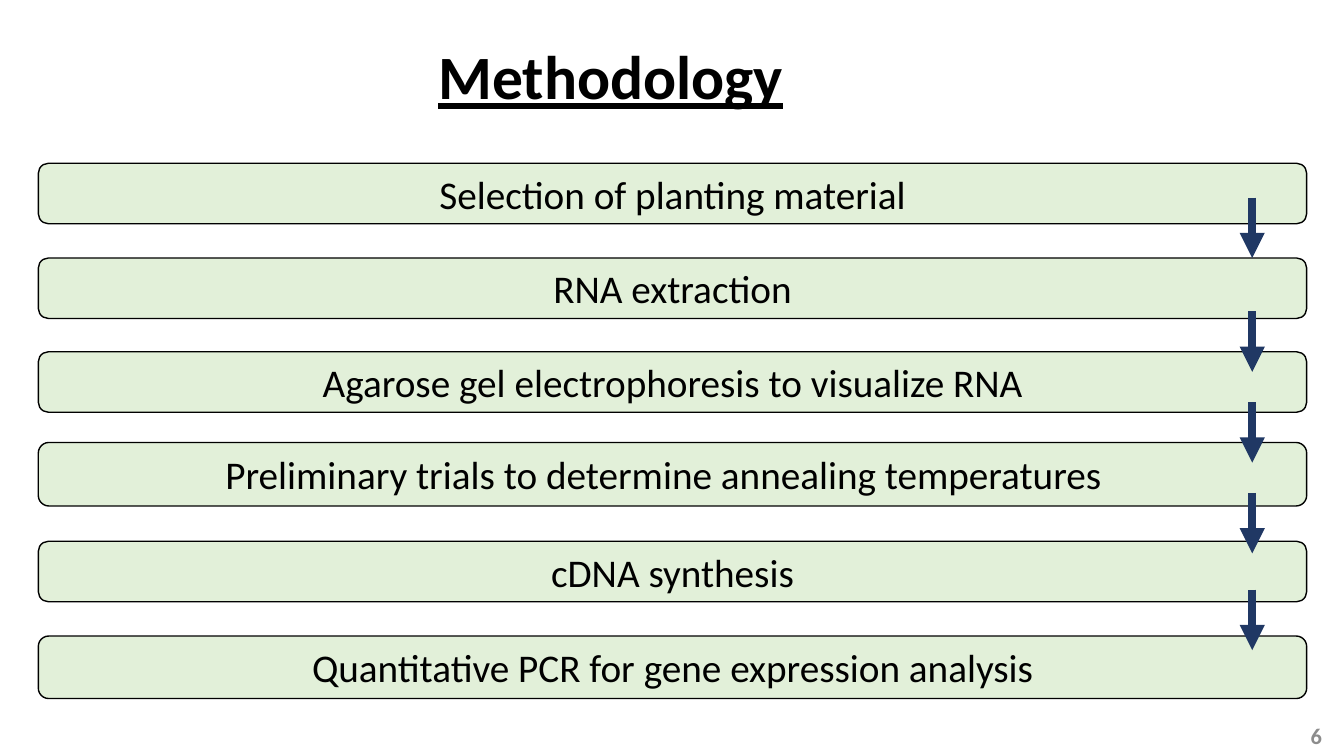
from lxml.etree import SubElement
from pptx import Presentation
from pptx.dml.color import RGBColor
from pptx.enum.shapes import MSO_CONNECTOR, MSO_SHAPE
from pptx.enum.text import MSO_ANCHOR, PP_ALIGN
from pptx.oxml.ns import qn
from pptx.util import Inches, Pt

COLORS = {"text": "000000", "number": "8C8C8C", "bar": "E2F0D9", "arrow": "203864"}
FORMATS = {
    "title": {"size": Pt(44), "bold": True, "underline": True},
    "step": {"size": Pt(28)},
    "number": {"size": Pt(16), "bold": True},
}
INSET = 0.1

# Step wording, top and height of its bar, extra inset on the right
STEPS = [
    ("Selection of planting material", 1.62, 0.6, 0),
    ("RNA extraction", 2.56, 0.6, 0),
    ("Agarose gel electrophoresis to visualize RNA", 3.49, 0.6, 0),
    ("Preliminary trials to determine annealing temperatures", 4.39, 0.63, 0.18),
    ("cDNA synthesis", 5.37, 0.6, 0),
    ("Quantitative PCR for gene expression analysis", 6.31, 0.62, 0),
]
ARROW_TOPS = [1.96, 3.09, 3.99, 4.89, 5.85]
ARROW_LENGTH = 0.6
ARROW_INDENT = 0.54  # from the right edge of the bars


def rgb(name):
    return RGBColor.from_string(COLORS[name])


def write(shape, text, style, color="text", align=PP_ALIGN.CENTER,
          anchor=MSO_ANCHOR.MIDDLE, extra_inset=0):
    frame = shape.text_frame
    frame.word_wrap = True
    frame.vertical_anchor = anchor
    frame.margin_right = Inches(INSET + extra_inset)
    paragraph = frame.paragraphs[0]
    paragraph.alignment = align
    run = paragraph.add_run()
    run.text = text
    run.font.name = "Calibri"
    run.font.color.rgb = rgb(color)
    for attribute, value in FORMATS[style].items():
        setattr(run.font, attribute, value)


def add_label(slide, box, text, style, **options):
    label = slide.shapes.add_textbox(*map(Inches, box))
    write(label, text, style, **options)


def add_step(slide, box, text, extra_inset):
    bar = slide.shapes.add_shape(MSO_SHAPE.FLOWCHART_ALTERNATE_PROCESS, *map(Inches, box))
    bar.shadow.inherit = False
    bar.fill.solid()
    bar.fill.fore_color.rgb = rgb("bar")
    bar.line.color.rgb = rgb("text")
    bar.line.width = Pt(1)
    write(bar, text, "step", extra_inset=extra_inset)


def add_arrow(slide, x, top, length):
    ends = map(Inches, (x, top, x, top + length))
    arrow = slide.shapes.add_connector(MSO_CONNECTOR.STRAIGHT, *ends)
    arrow.line.color.rgb = rgb("arrow")
    arrow.line.width = Pt(6)
    properties = arrow.element.spPr
    SubElement(properties.find(qn("a:ln")), qn("a:tailEnd"), type="triangle")
    SubElement(properties, qn("a:effectLst"))


def add_flow(slide, left, width):
    # Bars first, so the arrows lie on top of them
    for text, top, height, extra_inset in STEPS:
        add_step(slide, (left, top, width, height), text, extra_inset)
    for top in ARROW_TOPS:
        add_arrow(slide, left + width - ARROW_INDENT, top, ARROW_LENGTH)


def main():
    deck = Presentation()
    deck.slide_width, deck.slide_height = Inches(13.33), Inches(7.5)
    slide = deck.slides.add_slide(deck.slide_layouts[6])

    # Page number and title
    add_label(slide, (10.21, 7.1, 3, 0.4), "6", "number",
              color="number", align=PP_ALIGN.RIGHT)
    add_label(slide, (2.63, 0.33, 7, 0.84), "Methodology", "title",
              anchor=MSO_ANCHOR.TOP, extra_inset=0.14)

    # Steps of the method
    add_flow(slide, left=0.38, width=12.58)
    deck.save("out.pptx")


if __name__ == "__main__":
    main()
